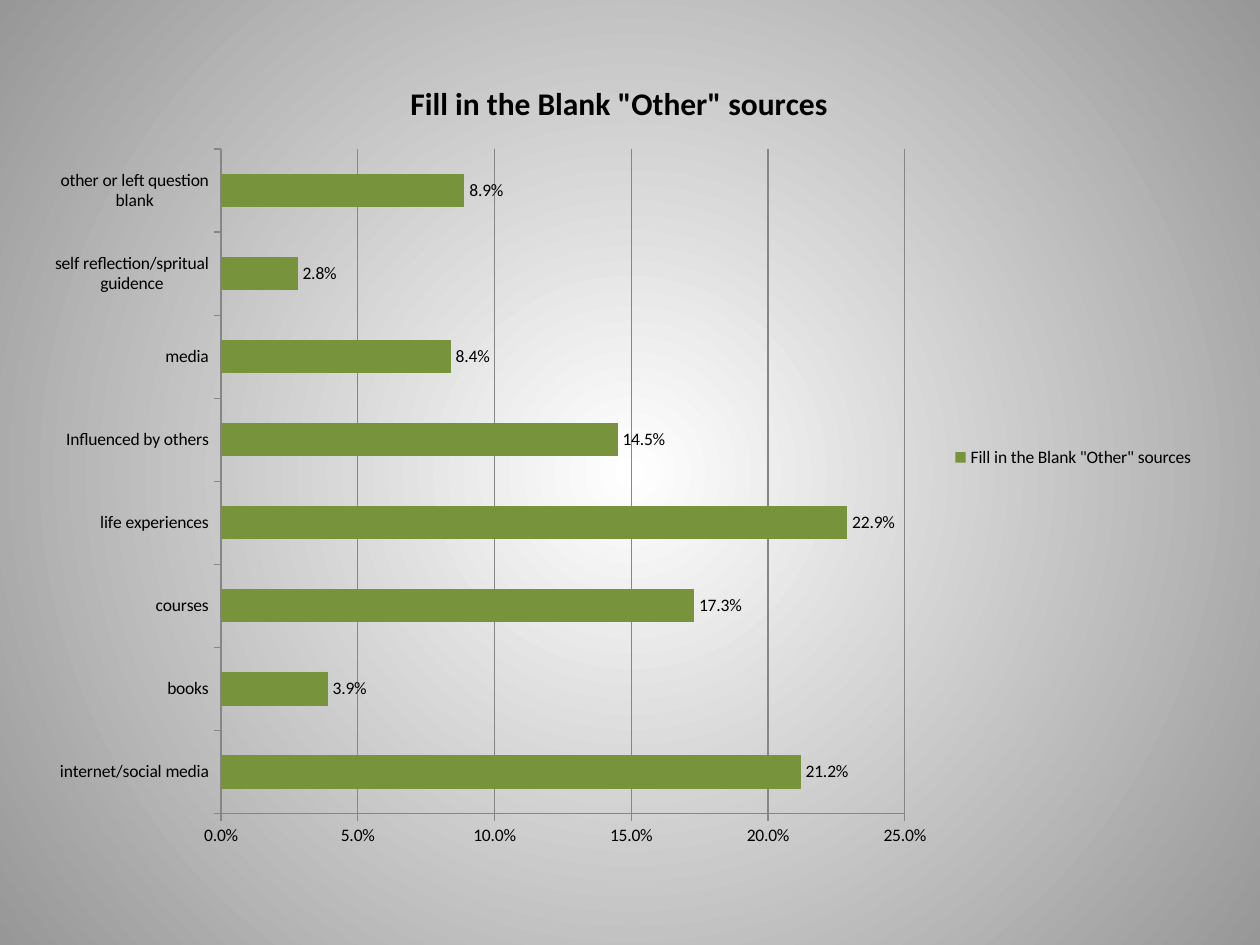
from pptx import Presentation
from pptx.chart.data import CategoryChartData
from pptx.dml.color import RGBColor
from pptx.enum.chart import XL_CHART_TYPE, XL_LABEL_POSITION, XL_LEGEND_POSITION, XL_TICK_MARK
from pptx.oxml import parse_xml
from pptx.oxml.ns import nsdecls, qn
from pptx.util import Inches, Pt

BLACK = RGBColor(0x00, 0x00, 0x00)
WHITE = RGBColor(0xFF, 0xFF, 0xFF)
GRAY = RGBColor(0x97, 0x97, 0x97)
LINE_GRAY = RGBColor(0x86, 0x86, 0x86)
GREEN = RGBColor(0x77, 0x93, 0x3C)

TITLE = 'Fill in the Blank "Other" sources'
PERCENT = "0.0%"
SOURCES = {
    "internet/social media": 0.212,
    "books": 0.039,
    "courses": 0.173,
    "life experiences": 0.229,
    "Influenced by others": 0.145,
    "media": 0.084,
    "self reflection/spritual guidence": 0.028,
    "other or left question blank": 0.089,
}


def format_font(font, size=10, bold=False, color=BLACK, name="Calibri"):
    font.size, font.bold, font.name = Pt(size), bold, name
    font.color.rgb = color


def write_text(text_frame, text, **font_format):
    text_frame.text = text
    format_font(text_frame.paragraphs[0].runs[0].font, **font_format)


class SlideBuilder:
    def __init__(self, slide):
        self.slide = slide

    def radial_background(self, center_color, edge_color):
        fill = self.slide.background.fill
        fill.gradient()
        for stop, position, color in zip(fill.gradient_stops, (0, 1), (center_color, edge_color)):
            stop.position = position
            stop.color.rgb = color
        # Replace the linear direction with a circle around the centre
        gradient = self.slide.element.find(".//" + qn("a:gradFill"))
        gradient.replace(gradient.find(qn("a:lin")), parse_xml(
            f'<a:path {nsdecls("a")} path="circle">'
            '<a:fillToRect l="50000" t="50000" r="50000" b="50000"/></a:path>'))

    def bar_chart(self, title, values, left, top, width, height):
        data = CategoryChartData(number_format=PERCENT)
        data.categories = list(values)
        data.add_series(title, list(values.values()))
        chart = self.slide.shapes.add_chart(
            XL_CHART_TYPE.BAR_CLUSTERED, Inches(left), Inches(top),
            Inches(width), Inches(height), data).chart
        format_font(chart.font)

        # Title and legend
        chart.has_title = True
        write_text(chart.chart_title.text_frame, title, size=18, bold=True)
        chart.chart_title.include_in_layout = False
        chart.has_legend = True
        chart.legend.position = XL_LEGEND_POSITION.RIGHT
        chart.legend.include_in_layout = False

        # Bars and their labels
        plot = chart.plots[0]
        plot.gap_width = 150
        plot.vary_by_categories = False
        bars = plot.series[0]
        bars.format.fill.solid()
        bars.format.fill.fore_color.rgb = GREEN
        labels = bars.data_labels
        labels.show_value = True
        labels.number_format = PERCENT
        labels.number_format_is_linked = False
        labels.position = XL_LABEL_POSITION.OUTSIDE_END
        format_font(labels.font)

        # Axes and gridlines
        for axis in (chart.category_axis, chart.value_axis):
            axis.major_tick_mark = XL_TICK_MARK.OUTSIDE
            axis.minor_tick_mark = XL_TICK_MARK.NONE
            self.gray_line(axis.format.line)
        value_axis = chart.value_axis
        value_axis.minimum_scale, value_axis.maximum_scale = 0, 0.25
        value_axis.major_unit = 0.05
        value_axis.has_major_gridlines = True
        self.gray_line(value_axis.major_gridlines.format.line)
        value_axis.tick_labels.number_format = PERCENT
        value_axis.tick_labels.number_format_is_linked = False

    def gray_line(self, line):
        line.color.rgb = LINE_GRAY
        line.width = Pt(0.75)


def main():
    presentation = Presentation()
    presentation.slide_width, presentation.slide_height = Inches(10), Inches(7.5)
    blank_layout = presentation.slide_layouts.get_by_name("Blank")
    builder = SlideBuilder(presentation.slides.add_slide(blank_layout))
    builder.radial_background(WHITE, GRAY)
    builder.bar_chart(TITLE, SOURCES, 0.25, 0.42, 9.33, 6.42)
    presentation.save("out.pptx")


if __name__ == "__main__":
    main()
